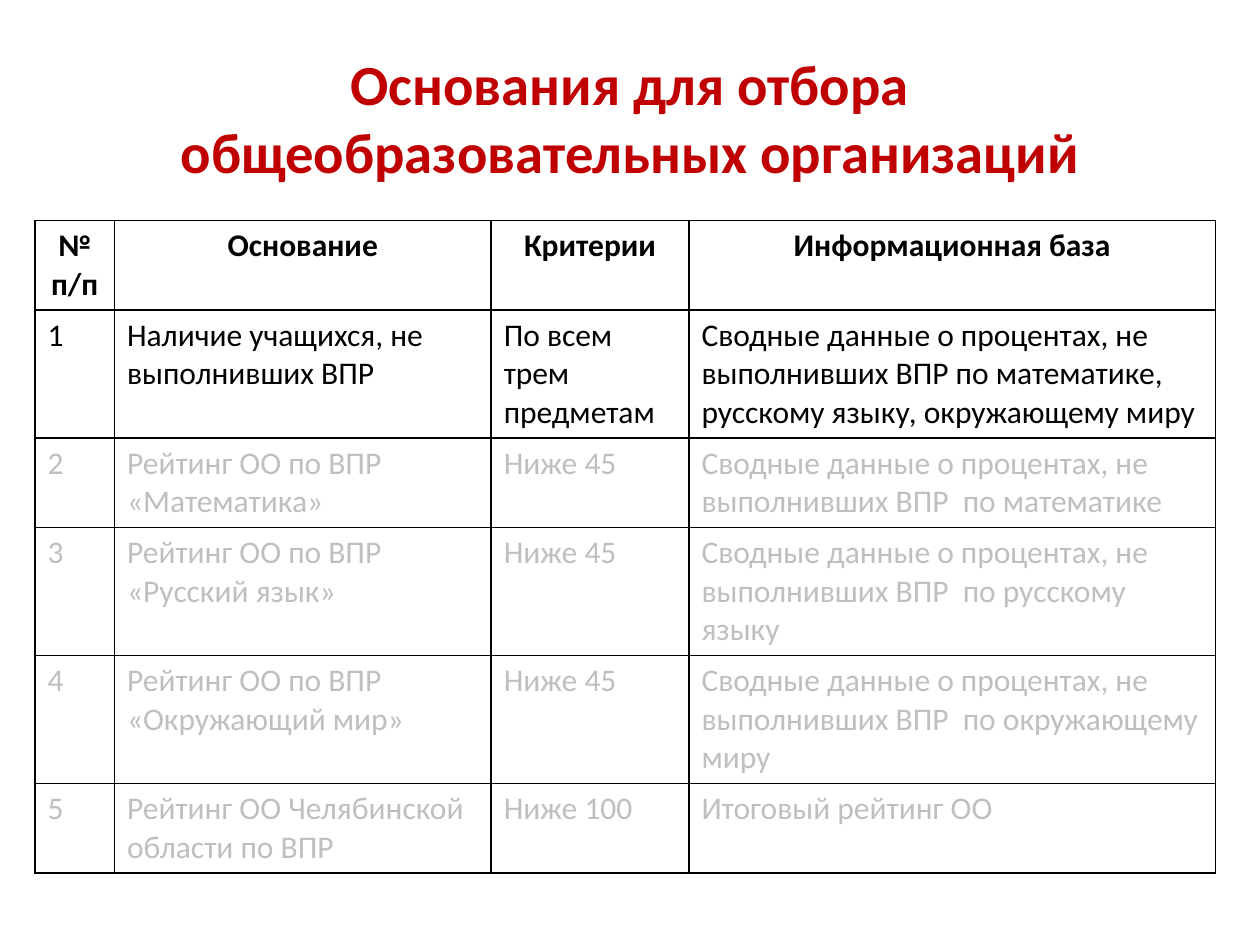
from dataclasses import dataclass

from lxml.etree import SubElement
from pptx import Presentation
from pptx.dml.color import RGBColor
from pptx.enum.text import MSO_ANCHOR, MSO_AUTO_SIZE, PP_ALIGN
from pptx.oxml.ns import qn
from pptx.util import Pt

FONT = "Calibri"
COLORS = {"title": "C00000", "text": "000000", "muted": "BFBFBF", "border": "000000"}
COLUMN_WIDTHS = (45.4, 215.3, 113, 300.9)
MIN_ROW_HEIGHT = 29.5
SUMMARY = "Сводные данные о процентах, не выполнивших ВПР"


@dataclass
class Row:
    cells: tuple[str, ...]
    color: str = "muted"
    bold: bool = False
    align: PP_ALIGN = PP_ALIGN.LEFT


def subject_row(number: int, subject: str, dative: str) -> Row:
    return Row((str(number), f"Рейтинг ОО по ВПР «{subject}»", "Ниже 45",
                f"{SUMMARY}  по {dative}"))


ROWS = [
    Row(("№ п/п", "Основание", "Критерии", "Информационная база"),
        "text", True, PP_ALIGN.CENTER),
    Row(("1", "Наличие учащихся, не выполнивших ВПР", "По всем трем предметам",
         f"{SUMMARY} по математике, русскому языку, окружающему миру"), "text"),
    subject_row(2, "Математика", "математике"),
    subject_row(3, "Русский язык", "русскому языку"),
    subject_row(4, "Окружающий мир", "окружающему миру"),
    Row(("5", "Рейтинг ОО Челябинской области по ВПР", "Ниже 100", "Итоговый рейтинг ОО")),
]


def style_paragraph(paragraph, size: float, color: str, bold: bool, align: PP_ALIGN) -> None:
    paragraph.alignment = align
    font = paragraph.font
    font.name, font.size, font.bold = FONT, Pt(size), bold
    font.color.rgb = RGBColor.from_string(COLORS[color])


def add_borders(cell, width: float = 1) -> None:
    properties = cell._tc.get_or_add_tcPr()
    for side in ("a:lnL", "a:lnR", "a:lnT", "a:lnB"):
        line = SubElement(properties, qn(side), w=str(Pt(width)))
        fill = SubElement(line, qn("a:solidFill"))
        SubElement(fill, qn("a:srgbClr"), val=COLORS["border"])


def add_title(slide, text: str) -> None:
    title = slide.shapes.title
    title.left, title.top, title.width, title.height = Pt(36), Pt(21.6), Pt(648), Pt(90)
    frame = title.text_frame
    frame.text = text
    frame.word_wrap = True
    frame.auto_size = MSO_AUTO_SIZE.NONE
    frame.vertical_anchor = MSO_ANCHOR.MIDDLE
    style_paragraph(frame.paragraphs[0], 32.4, "title", True, PP_ALIGN.CENTER)


def add_criteria_table(slide, rows: list[Row]) -> None:
    frame = slide.shapes.add_table(len(rows), len(COLUMN_WIDTHS), Pt(20), Pt(126),
                                   Pt(sum(COLUMN_WIDTHS)), Pt(MIN_ROW_HEIGHT * len(rows)))
    table = frame.table
    table.first_row = table.horz_banding = False
    for column, width in zip(table.columns, COLUMN_WIDTHS):
        column.width = Pt(width)
    for row, table_row in zip(rows, table.rows):
        table_row.height = Pt(MIN_ROW_HEIGHT)  # rows grow with their text
        for text, cell in zip(row.cells, table_row.cells):
            cell.text = text
            style_paragraph(cell.text_frame.paragraphs[0], 18, row.color, row.bold, row.align)
            add_borders(cell)
            cell.fill.background()
    frame.height = Pt(367.2)


def main() -> None:
    deck = Presentation()
    deck.slide_width, deck.slide_height = Pt(720), Pt(540)
    slide = deck.slides.add_slide(deck.slide_layouts[5])  # title only
    add_title(slide, "Основания для отбора общеобразовательных организаций")
    add_criteria_table(slide, ROWS)
    deck.save("out.pptx")


if __name__ == "__main__":
    main()
